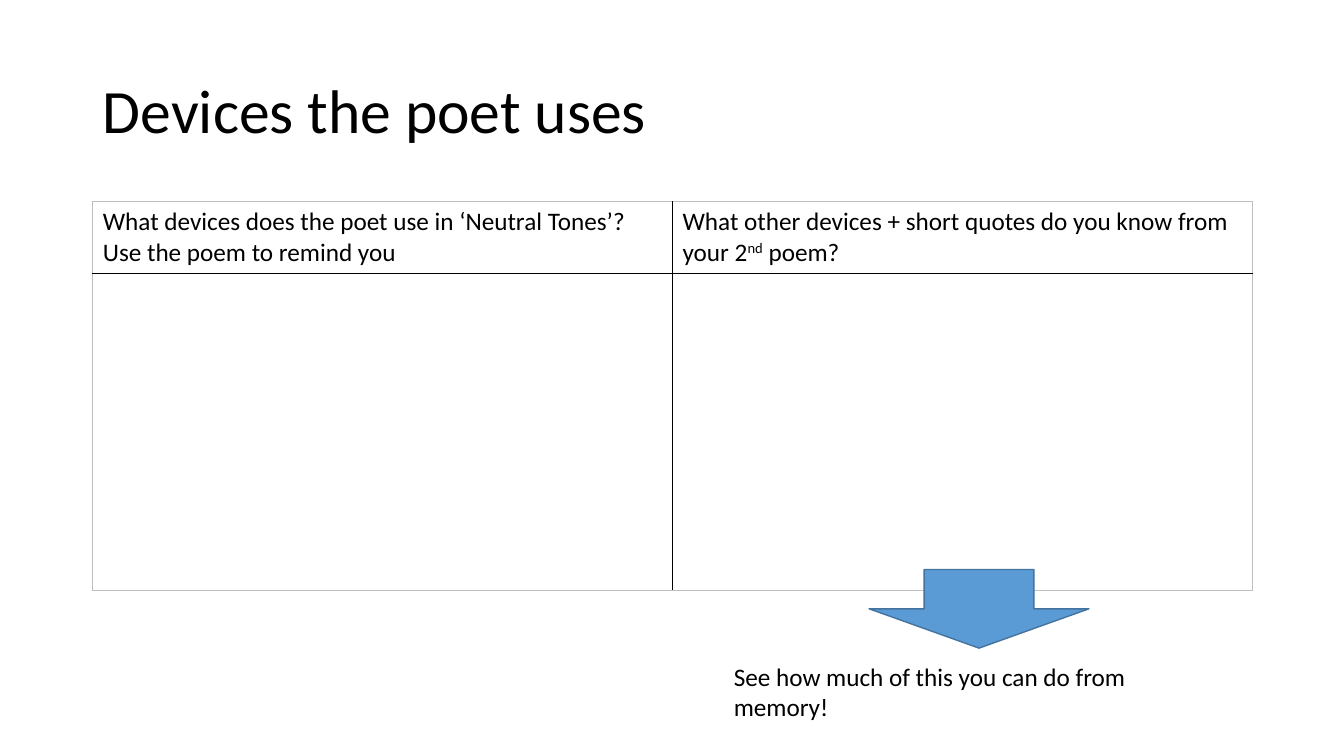
import pptx
import pptx.util
import pptx.dml.color
import pptx.enum.shapes
import pptx.enum.text
import pptx.oxml
import pptx.oxml.ns
from dataclasses import dataclass
from pptx.util import Inches


@dataclass(frozen=True)
class Theme:
    """Hold the colours, font and type sizes."""
    font: str = "Calibri"
    ink: str = "000000"
    edge: str = "BFBFBF"
    fill: str = "5B9BD5"
    line: str = "43739E"
    head: int = 44
    text: int = 18


THEME = Theme()
HEADS = [
    [[("What devices does the poet use in ‘Neutral Tones’?", 0)],
     [("Use the poem to remind you", 0)]],
    [[("What other devices + short quotes do you know from your 2", 0),
      ("nd", 30000), (" poem?", 0)]],
]


def tint(name):
    """Turn a hex string into a colour."""
    return pptx.dml.color.RGBColor.from_string(name)


def apply(item, form):
    """Set each attribute named in a dict."""
    for key, value in form.items():
        setattr(item, key, value)


def place(item, left, top, width, height):
    """Move and size a shape, in inches."""
    apply(item, {"left": Inches(left), "top": Inches(top),
                 "width": Inches(width), "height": Inches(height)})


def write(frame, paras, size):
    """Fill a text frame with paragraphs of (text, raise) runs."""
    for i, parts in enumerate(paras):
        para = frame.paragraphs[0] if i == 0 else frame.add_paragraph()
        para.alignment = pptx.enum.text.PP_ALIGN.LEFT
        for text, lift in parts:
            run = para.add_run()
            run.text = text
            apply(run.font, {"name": THEME.font, "bold": False,
                             "size": pptx.util.Pt(size)})
            run.font.color.rgb = tint(THEME.ink)
            if lift:
                run._r.get_or_add_rPr().set("baseline", str(lift))


def border(cell, side, color, width):
    """Draw one side of a cell."""
    cell._tc.get_or_add_tcPr().append(pptx.oxml.parse_xml(
        f'<a:ln{side} {pptx.oxml.ns.nsdecls("a")} w="{pptx.util.Pt(width)}">'
        f'<a:solidFill><a:srgbClr val="{color}"/></a:solidFill></a:ln{side}>'))


def add_title(slide, text):
    """Fill the title placeholder."""
    title = slide.shapes.title
    place(title, 0.92, 0.4, 11.5, 1.45)
    title.text_frame.vertical_anchor = pptx.enum.text.MSO_ANCHOR.MIDDLE
    write(title.text_frame, [[(text, 0)]], THEME.head)
    title.text_frame.paragraphs[0].line_spacing = 0.9


def add_grid(slide, heads):
    """Add the table with black inner and grey outer lines."""
    table = slide.shapes.add_table(
        2, 2, Inches(0.92), Inches(2), Inches(11.5), Inches(3.85)).table
    apply(table, {"first_row": False, "horz_banding": False})
    for row, height in zip(table.rows, (0.7, 3.15)):
        row.height = Inches(height)
    for r in range(2):
        for c in range(2):
            cell = table.cell(r, c)
            inner = {"L": c == 1, "R": c == 0, "T": r == 1, "B": r == 0}
            for side, dark in inner.items():
                border(cell, side, THEME.ink if dark else THEME.edge,
                       1 if dark else 0.5)
            cell.fill.background()
    for c, paras in enumerate(heads):
        write(table.cell(0, c).text_frame, paras, THEME.text)


def add_arrow(slide):
    """Add the arrow that points at the hint."""
    arrow = slide.shapes.add_shape(
        pptx.enum.shapes.MSO_SHAPE.DOWN_ARROW,
        Inches(8.62), Inches(5.65), Inches(2.18), Inches(0.78))
    arrow.shadow.inherit = False
    arrow.fill.solid()
    arrow.fill.fore_color.rgb = tint(THEME.fill)
    arrow.line.color.rgb = tint(THEME.line)
    arrow.line.width = pptx.util.Pt(1)


def add_hint(slide, text):
    """Add the hint under the arrow."""
    frame = slide.shapes.add_textbox(
        Inches(7.18), Inches(6.51), Inches(4.54), Inches(0.71)).text_frame
    frame.word_wrap = True
    write(frame, [[(text, 0)]], THEME.text)


def main():
    """Build the slide and save it."""
    deck = pptx.Presentation()
    apply(deck, {"slide_width": Inches(13.33), "slide_height": Inches(7.5)})
    slide = deck.slides.add_slide(deck.slide_layouts[5])
    add_title(slide, "Devices the poet uses")
    add_grid(slide, HEADS)
    add_arrow(slide)
    add_hint(slide, "See how much of this you can do from memory!")
    deck.save("out.pptx")


if __name__ == "__main__":
    main()
